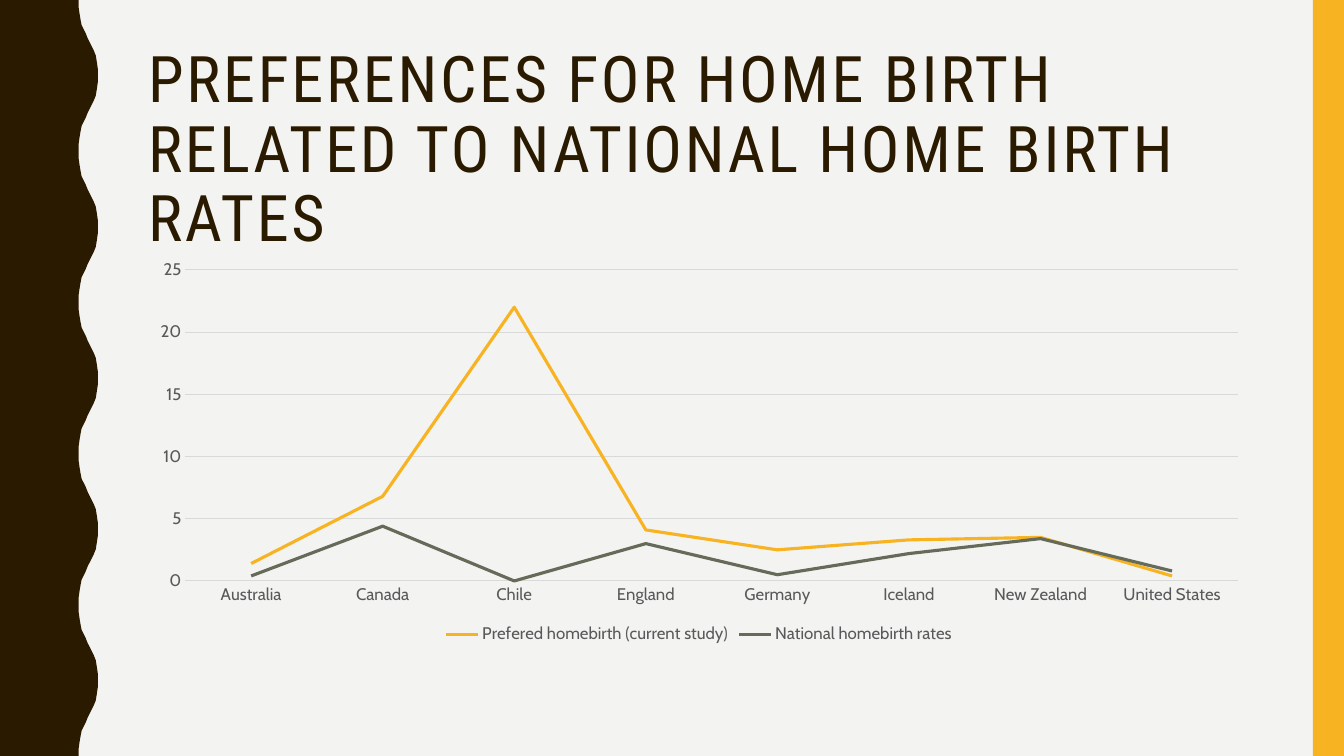
import pptx
import pptx.chart.data
import pptx.dml.color
import pptx.enum.chart
import pptx.enum.shapes
import pptx.enum.text
import pptx.util

Inches = pptx.util.Inches
Pt = pptx.util.Pt
RGBColor = pptx.dml.color.RGBColor

BACKGROUND = RGBColor(0xF3, 0xF3, 0xF2)
BROWN = RGBColor(0x2A, 0x1A, 0x00)
AMBER = RGBColor(0xF8, 0xB3, 0x23)
OLIVE = RGBColor(0x65, 0x6A, 0x59)
LABEL_GRAY = RGBColor(0x59, 0x59, 0x59)
GRID_GRAY = RGBColor(0xD9, 0xD9, 0xD9)

TITLE = "PREFERENCES FOR HOME BIRTH RELATED TO NATIONAL HOME BIRTH RATES"
COUNTRIES = ["Australia", "Canada", "Chile", "England", "Germany", "Iceland",
             "New Zealand", "United States"]
RATES = [
    ("Prefered homebirth (current study)", AMBER,
     [1.4, 6.8, 22, 4.1, 2.5, 3.3, 3.5, 0.4]),
    ("National homebirth rates", OLIVE,
     [0.4, 4.4, 0, 3, 0.5, 2.2, 3.4, 0.8]),
]

SLIDE_HEIGHT = 7.5
WAVE_LENGTH = 1.5
# Edge of the wave from trough to crest, as (x, y) in inches.
RISING_EDGE = [(0.78, 0), (0.78, 0.07), (0.79, 0.14), (0.8, 0.2), (0.81, 0.25),
               (0.83, 0.29), (0.85, 0.33), (0.87, 0.38), (0.89, 0.42),
               (0.91, 0.46), (0.93, 0.5), (0.95, 0.55), (0.96, 0.61),
               (0.97, 0.68), (0.97, 0.75)]


def paint(shape, color):
    shape.fill.solid()
    shape.fill.fore_color.rgb = color
    shape.line.fill.background()
    shape.shadow.inherit = False


def add_wave_band(page):
    """Draw the left band, whose right edge repeats one mirrored wave."""
    falling_edge = [(x, WAVE_LENGTH - y) for x, y in reversed(RISING_EDGE[:-1])]
    wave = RISING_EDGE + falling_edge
    edge = [(x, y + count * WAVE_LENGTH)
            for count in range(round(SLIDE_HEIGHT / WAVE_LENGTH))
            for x, y in wave]
    outline = edge + [(0, SLIDE_HEIGHT)]
    builder = page.shapes.build_freeform(0, 0)
    builder.add_line_segments([(Inches(x), Inches(y)) for x, y in outline])
    paint(builder.convert_to_shape(), BROWN)


def add_side_bar(page):
    bar = page.shapes.add_shape(pptx.enum.shapes.MSO_SHAPE.RECTANGLE, Inches(13.02), 0,
                                Inches(0.31), Inches(SLIDE_HEIGHT))
    paint(bar, AMBER)


def add_title(page):
    box = page.shapes.add_textbox(Inches(1.37), Inches(0.42), Inches(11.13), Inches(1.63))
    frame = box.text_frame
    frame.word_wrap = True
    frame.vertical_anchor = pptx.enum.text.MSO_ANCHOR.TOP
    para = frame.paragraphs[0]
    para.line_spacing = 0.9
    span = para.add_run()
    span.text = TITLE
    style_font(span.font, "Roboto Condensed", 45.9, BROWN)
    span.font._element.set("spc", "200")


def style_font(font, name, size, color):
    font.name = name
    font.size = Pt(size)
    font.color.rgb = color


def style_line(line, color, width):
    line.color.rgb = color
    line.width = Pt(width)


def style_axis(axis):
    axis.major_tick_mark = pptx.enum.chart.XL_TICK_MARK.NONE
    axis.minor_tick_mark = pptx.enum.chart.XL_TICK_MARK.NONE
    style_font(axis.tick_labels.font, "Cabin", 12, LABEL_GRAY)


def add_rates_chart(page):
    data = pptx.chart.data.CategoryChartData()
    data.categories = COUNTRIES
    for name, _, values in RATES:
        data.add_series(name, values)
    chart = page.shapes.add_chart(
        pptx.enum.chart.XL_CHART_TYPE.LINE, Inches(1.37), Inches(2.5),
        Inches(11.13), Inches(3.93), data).chart
    chart.has_title = False
    chart.font.name = "Cabin"
    chart.font.size = Pt(10)
    chart.plots[0].vary_by_categories = False

    for series, (_, color, _) in zip(chart.plots[0].series, RATES):
        series.smooth = False
        style_line(series.format.line, color, 2.25)

    style_axis(chart.category_axis)
    style_line(chart.category_axis.format.line, GRID_GRAY, 0.75)

    value_axis = chart.value_axis
    style_axis(value_axis)
    value_axis.minimum_scale, value_axis.maximum_scale = 0, 25
    value_axis.major_unit = 5
    value_axis.format.line.fill.background()
    value_axis.has_major_gridlines = True
    style_line(value_axis.major_gridlines.format.line, GRID_GRAY, 0.75)

    chart.has_legend = True
    chart.legend.position = pptx.enum.chart.XL_LEGEND_POSITION.BOTTOM
    chart.legend.include_in_layout = False
    style_font(chart.legend.font, "Cabin", 12, LABEL_GRAY)


def main():
    deck = pptx.Presentation()
    deck.slide_width = Inches(13.33)
    deck.slide_height = Inches(SLIDE_HEIGHT)
    page = deck.slides.add_slide(deck.slide_layouts[6])
    page.background.fill.solid()
    page.background.fill.fore_color.rgb = BACKGROUND
    add_wave_band(page)
    add_side_bar(page)
    add_title(page)
    add_rates_chart(page)
    deck.save("out.pptx")


if __name__ == "__main__":
    main()
